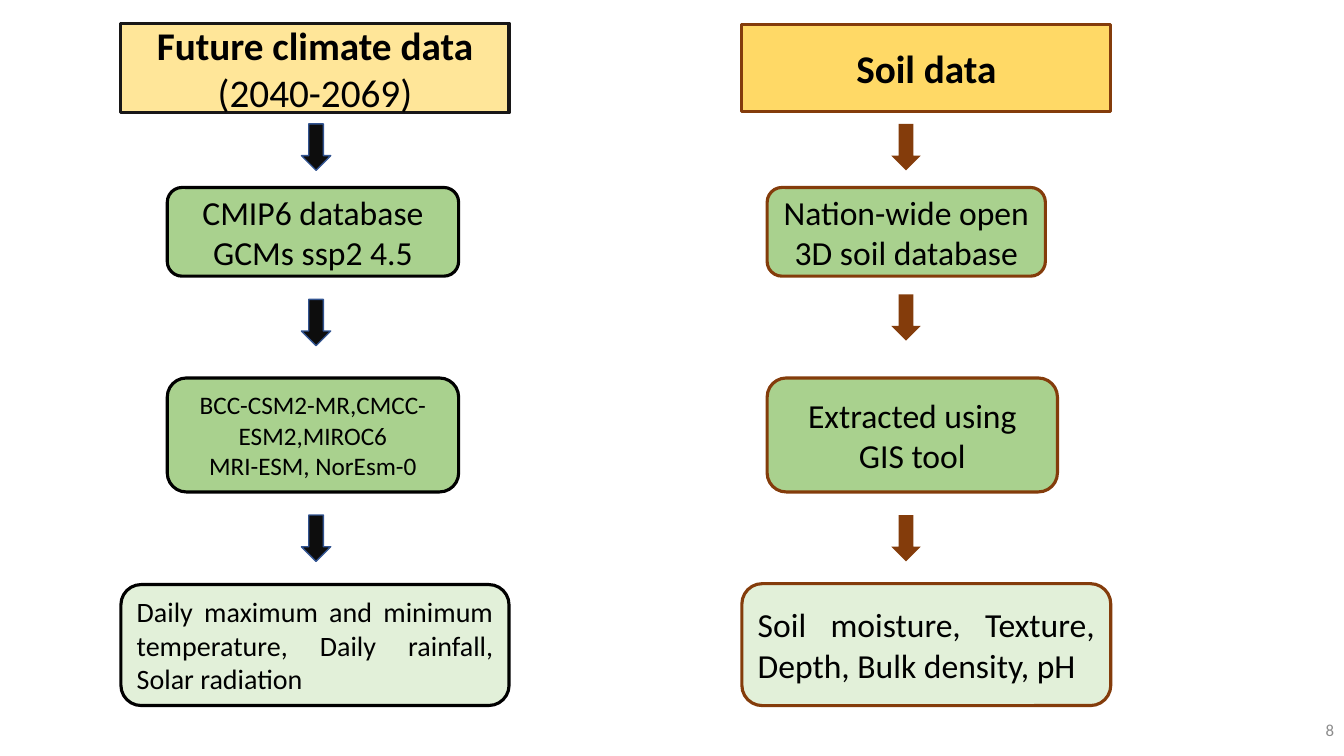
from pptx import Presentation
from pptx.dml.color import RGBColor
from pptx.enum.shapes import MSO_SHAPE
from pptx.enum.text import MSO_ANCHOR, PP_ALIGN
from pptx.util import Inches, Pt

COLORS = {
    "black": "000000", "ink": "181717", "arrow": "0D0D0D", "blue": "325491",
    "brown": "843C0B", "gold": "FFD966", "pale_gold": "FFE699",
    "green": "A9D18E", "pale_green": "E2F0D9", "grey": "8C8C8C",
}


class FlowSlide:
    """Draws on one slide; lengths are percentages of its width and height."""

    font = "Calibri"
    border = 2.25

    def __init__(self, deck):
        self.width, self.height = deck.slide_width, deck.slide_height
        self.slide = deck.slides.add_slide(deck.slide_layouts[6])

    def place(self, left, top, width, height):
        return (round(self.width * left / 100), round(self.height * top / 100),
                round(self.width * width / 100), round(self.height * height / 100))

    def color(self, name):
        return RGBColor.from_string(COLORS[name])

    def add_lines(self, frame, lines, size, align, color="black"):
        frame.word_wrap = True
        frame.vertical_anchor = MSO_ANCHOR.MIDDLE
        for index, (words, bold) in enumerate(lines):
            paragraph = frame.paragraphs[0] if index == 0 else frame.add_paragraph()
            paragraph.alignment = align
            run = paragraph.add_run()
            run.text = words
            run.font.name, run.font.size, run.font.bold = self.font, Pt(size), bold
            run.font.color.rgb = self.color(color)

    def block(self, kind, area, fill, line=None, line_width=border):
        block = self.slide.shapes.add_shape(kind, *self.place(*area))
        block.shadow.inherit = False
        block.fill.solid()
        block.fill.fore_color.rgb = self.color(fill)
        if line:
            block.line.color.rgb = self.color(line)
            block.line.width = Pt(line_width)
        else:
            block.line.fill.background()
        return block

    def header(self, area, fill, line, lines):
        header = self.block(MSO_SHAPE.RECTANGLE, area, fill, line)
        self.add_lines(header.text_frame, lines, 28, PP_ALIGN.CENTER)

    def step(self, area, line, lines, size):
        step = self.block(MSO_SHAPE.ROUNDED_RECTANGLE, area, "green", line)
        self.add_lines(step.text_frame, [(words, False) for words in lines], size, PP_ALIGN.CENTER)

    def result(self, area, line, words, size):
        result = self.block(MSO_SHAPE.ROUNDED_RECTANGLE, area, "pale_green", line)
        self.add_lines(result.text_frame, [(words, False)], size, PP_ALIGN.JUSTIFY)

    def arrows(self, left, tops, fill, line=None):
        for top in tops:
            self.block(MSO_SHAPE.DOWN_ARROW, (left, top, 2.18, 6.13), fill, line, 1)

    def page_number(self, number):
        corner = self.slide.shapes.add_textbox(*self.place(77.5, 93.9, 22.5, 5.3))
        self.add_lines(corner.text_frame, [(number, False)], 12, PP_ALIGN.RIGHT, "grey")


def main():
    deck = Presentation()
    deck.slide_width, deck.slide_height = Inches(13.33), Inches(7.5)
    flow = FlowSlide(deck)

    # Rows shared by both flows: top and height
    source_row, method_row = (24.8, 11.73), (50, 15.07)

    # Climate flow
    wide_left, wide, step_left, step = 9, 28.88, 12.45, 21.68
    flow.header((wide_left, 3.07, wide, 11.87), "pale_gold", "ink",
                [("Future climate data", True), ("(2040-2069)", False)])
    for (top, height), lines, size in (
        (source_row, ["CMIP6 database", "GCMs ssp2 4.5"], 24),
        (method_row, ["BCC-CSM2-MR,CMCC-ESM2,MIROC6", "MRI-ESM, NorEsm-0"], 18),
    ):
        flow.step((step_left, top, step, height), "black", lines, size)
    flow.result((wide_left, 77.33, wide, 16), "black",
                "Daily maximum and minimum temperature, Daily rainfall, Solar radiation", 20)
    flow.arrows(22.43, (16.4, 39.6, 68.13), "arrow", "blue")

    # Soil flow
    wide_left, wide, step_left = 55.2, 27.45, 57.08
    flow.header((wide_left, 3.2, wide, 11.6), "gold", "brown", [("Soil data", True)])
    for (top, height), step, words in (
        (source_row, 20.7, "Nation-wide open 3D soil database"),
        (method_row, 21.6, "Extracted using GIS tool"),
    ):
        flow.step((step_left, top, step, height), "brown", [words], 24)
    flow.result((wide_left, 77.2, wide, 16.13), "brown",
                "Soil moisture, Texture, Depth, Bulk density, pH", 24)
    flow.arrows(66.32, (16.4, 38.93, 68.13), "brown")

    # Page number
    flow.page_number("8")
    deck.save("out.pptx")


if __name__ == "__main__":
    main()
